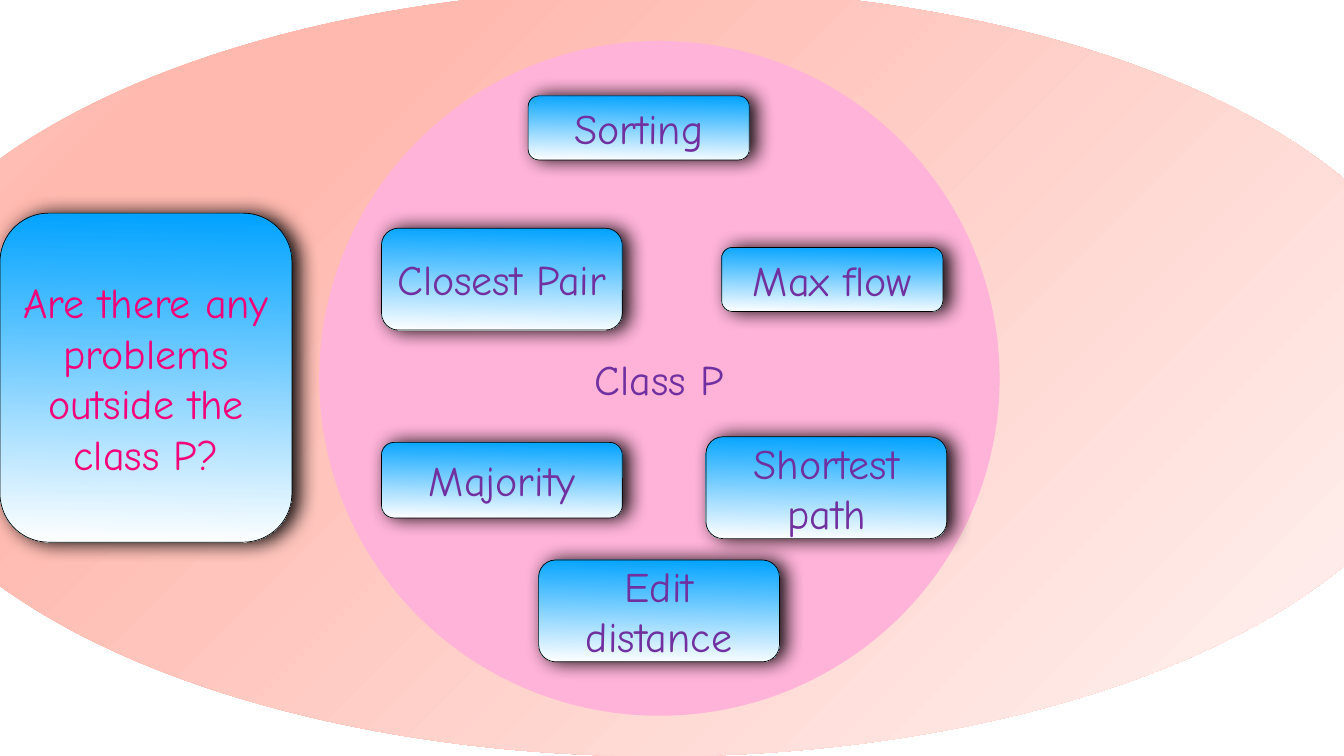
from pptx import Presentation
from pptx.dml.color import RGBColor as RGB
from pptx.enum.shapes import MSO_SHAPE as Shape
from pptx.enum.text import MSO_ANCHOR as Anchor, PP_ALIGN as Align
from pptx.oxml import parse_xml
from pptx.oxml.ns import nsdecls
from pptx.util import Pt

COLORS = {
    "pink": "FFB3D9", "purple": "7030A0", "magenta": "F10079",
    "blue": "00A2FF", "white": "FFFFFF", "black": "000000",
    "pale": "FFF7F6", "salmon": "FFB9AF", "blush": "FFD0CA",
}
FONT = "Comic Neue"

SKY = [(0, "blue"), (100, "white")]
GLOW = [(0, "pale"), (74, "salmon"), (83, "salmon"), (100, "blush")]
DOWN = '<a:lin ang="5460000" scaled="0"/>'
CORNER = '<a:path path="circle"><a:fillToRect l="100000" t="100000"/></a:path>'

# Problems in class P: text, left, top, width, height
PROBLEMS = [
    ("Sorting", 754.5, 137, 316, 91.5),
    ("Max flow", 1031, 353.5, 316, 91.5),
    ("Shortest path", 1008.5, 624, 344, 145.5),
    ("Edit distance", 769.5, 800, 344, 145.5),
    ("Majority", 545, 632, 344, 108),
    ("Closest Pair", 545, 326, 344, 145.5),
]


def add_form(slide, kind, box):
    form = slide.shapes.add_shape(kind, *map(Pt, box))
    form.shadow.inherit = False
    form.line.fill.background()
    return form


def set_blend(form, stops, path):
    """Fill a form with a gradient along the given path."""
    marks = "".join(
        f'<a:gs pos="{pos * 1000}"><a:srgbClr val="{COLORS[name]}"/></a:gs>'
        for pos, name in stops)
    blend = parse_xml(f'<a:gradFill {nsdecls("a")} rotWithShape="1">'
                      f'<a:gsLst>{marks}</a:gsLst>{path}</a:gradFill>')
    form.fill.background()
    props = form.element.spPr
    props.replace(props.find("{*}noFill"), blend)


def set_shade(form):
    """Cast a soft dark shadow to the right."""
    form.element.spPr.find("{*}effectLst").append(parse_xml(
        f'<a:outerShdw {nsdecls("a")} blurRad="{Pt(28)}" dist="{Pt(9)}" dir="0" '
        f'rotWithShape="0"><a:srgbClr val="{COLORS["black"]}">'
        '<a:alpha val="97000"/></a:srgbClr></a:outerShdw>'))


def set_text(form, text, color):
    frame = form.text_frame
    frame.word_wrap = True
    frame.vertical_anchor = Anchor.MIDDLE
    frame.margin_left = frame.margin_right = Pt(4)
    frame.margin_top = frame.margin_bottom = Pt(4)
    para = frame.paragraphs[0]
    para.alignment = Align.CENTER
    run = para.add_run()
    run.text = text
    run.font.name = FONT
    run.font.size = Pt(60)
    run.font.color.rgb = RGB.from_string(COLORS[color])


def add_card(slide, text, box, color="purple"):
    card = add_form(slide, Shape.ROUNDED_RECTANGLE, box)
    set_blend(card, SKY, DOWN)
    card.line.color.rgb = RGB.from_string(COLORS["black"])
    card.line.width = Pt(1)
    set_shade(card)
    set_text(card, text, color)


def main():
    deck = Presentation()
    deck.slide_width, deck.slide_height = Pt(1920), Pt(1080)
    slide = deck.slides.add_slide(deck.slide_layouts[6])

    # Space of all problems
    space = add_form(slide, Shape.OVAL, (-191.5, -16.5, 2266, 1097))
    set_blend(space, GLOW, CORNER)

    # Class P
    circle = add_form(slide, Shape.OVAL, (456, 58.5, 972, 964))
    circle.fill.solid()
    circle.fill.fore_color.rgb = RGB.from_string(COLORS["pink"])
    set_text(circle, "Class P", "purple")

    # Question and problem cards
    add_card(slide, "Are there any problems outside the class P?",
             (0, 304.5, 417, 470), "magenta")
    for text, *box in PROBLEMS:
        add_card(slide, text, box)

    deck.save("out.pptx")


if __name__ == "__main__":
    main()
